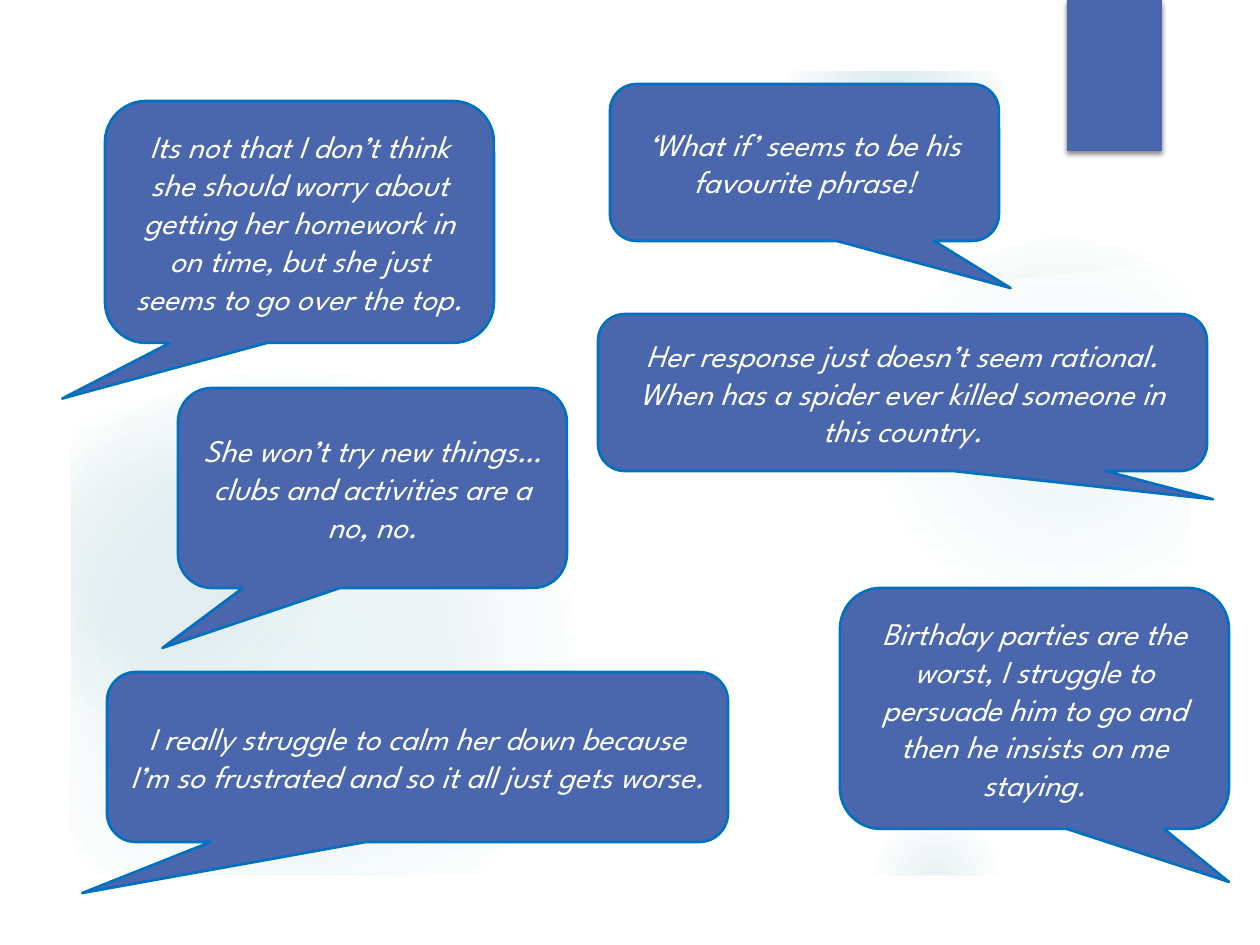
from lxml.etree import SubElement
from pptx import Presentation
from pptx.dml.color import RGBColor
from pptx.enum.shapes import MSO_SHAPE
from pptx.enum.text import MSO_ANCHOR, PP_ALIGN
from pptx.oxml import parse_xml
from pptx.oxml.ns import nsdecls, qn
from pptx.util import Emu, Pt

PX = 914400 / 126
WIDTH, HEIGHT = 1260, 945
COLOURS = {"white": "FFFFFF", "glow": "5AA2AE", "blue": "4A66AC",
           "outline": "0070C0", "shadow": "000000"}
QUOTE_FONT = {"name": "League Spartan", "size": Pt(18), "italic": True}

# Box, then gradient stops as (position %, opacity %); the first two rise above the sheet.
GLOWS = [
    ((868, 231, 388, 388), [(0, 7), (36, 6), (69, 0)]),
    ((784, 0, 220, 220), [(0, 14), (36, 7), (73, 0)]),
    ((0, 399, 325, 325), [(0, 8), (36, 8), (72, 0)]),
    ((868, 809, 136, 136), [(0, 14), (36, 7), (66, 0)]),
    ((0, 368, 577, 577), [(0, 11), (36, 10), (75, 0)]),
]
SWOOSH = [(881, 295), (960, 295), (1080, 281), (1205, 262), (1198, 219), (1135, 239),
          (1071, 256), (1009, 268), (941, 281), (877, 289)]
SHEET = [(67, 256), (67, 881), (1193, 881), (1193, 256), (1091, 271), (989, 282),
         (887, 289), (787, 294), (690, 295), (597, 295), (509, 294), (426, 290),
         (349, 285), (280, 280), (166, 268), (93, 260)]
FRAME = [[(0, 0), (0, HEIGHT), (WIDTH, HEIGHT), (WIDTH, 0)],
         [(1191, 876), (71, 876), (71, 71), (1191, 71)]]

# Box, tail tip as a share of the box measured from its centre, and wording.
QUOTES = [
    ((105, 101, 389, 242), (-0.61, 0.73),
     "Its not that I don’t think she should worry about getting her homework in on time, "
     "but she just seems to go over the top."),
    ((610, 84, 389, 157), (0.53, 0.8), "‘What if’ seems to be his favourite phrase!"),
    ((178, 388, 389, 200), (-0.54, 0.8),
     "She won’t try new things…clubs and activities are a no, no."),
    ((598, 314, 609, 157), (0.51, 0.68),
     "Her response just doesn’t seem rational. When has a spider ever killed someone "
     "in this country."),
    ((107, 672, 621, 170), (-0.54, 0.8),
     "I really struggle to calm her down because I’m so frustrated and so it all just "
     "gets worse."),
    ((840, 588, 389, 241), (0.5, 0.72),
     "Birthday parties are the worst, I struggle to persuade him to go and then he "
     "insists on me staying."),
]


def emu(pixels):
    return Emu(round(pixels * PX))


def rgb(name):
    return RGBColor.from_string(COLOURS[name])


def paint(shape, colour):
    shape.shadow.inherit = False
    shape.fill.solid()
    shape.fill.fore_color.rgb = rgb(colour)
    shape.line.fill.background()


def add_glow(slide, box, stops):
    shape = slide.shapes.add_shape(MSO_SHAPE.OVAL, *map(emu, box))
    stop_xml = "".join(
        f'<a:gs pos="{position * 1000}"><a:srgbClr val="{COLOURS["glow"]}">'
        f'<a:alpha val="{opacity * 1000}"/></a:srgbClr></a:gs>'
        for position, opacity in stops)
    shape._element.spPr.append(parse_xml(
        f'<a:gradFill {nsdecls("a")} rotWithShape="1"><a:gsLst>{stop_xml}</a:gsLst>'
        '<a:path path="circle"><a:fillToRect l="50000" t="50000" r="50000" b="50000"/>'
        '</a:path></a:gradFill>'))
    shape.line.fill.background()
    shape.shadow.inherit = False


def add_white_outline(slide, *contours):
    builder = slide.shapes.build_freeform(*contours[0][0], scale=PX)
    builder.add_line_segments(contours[0][1:], close=True)
    for contour in contours[1:]:
        builder.move_to(*contour[0])
        builder.add_line_segments(contour[1:], close=True)
    shape = builder.convert_to_shape()
    paint(shape, "white")
    return shape


def add_backdrop(slide):
    """Glows showing above a curved sheet, then glows on it, all cropped by a frame."""
    for box, stops in GLOWS[:2]:
        add_glow(slide, box, stops)
    swoosh = add_white_outline(slide, SWOOSH)
    swoosh.rotation = 350.2
    colour = swoosh._element.spPr.find(".//" + qn("a:srgbClr"))
    SubElement(colour, qn("a:alpha"), val="20000")
    add_white_outline(slide, SHEET)
    for box, stops in GLOWS:
        add_glow(slide, box, stops)
    add_white_outline(slide, *FRAME)


def add_tab(slide, box):
    shape = slide.shapes.add_shape(MSO_SHAPE.RECTANGLE, *map(emu, box))
    paint(shape, "blue")
    effects = shape._element.spPr.find(qn("a:effectLst"))
    effects.append(parse_xml(
        f'<a:outerShdw {nsdecls("a")} blurRad="{Pt(3)}" dist="{Pt(2)}" dir="5400000" '
        f'rotWithShape="0"><a:srgbClr val="{COLOURS["shadow"]}"><a:alpha val="45000"/>'
        '</a:srgbClr></a:outerShdw>'))


def add_quote(slide, box, tail, text):
    shape = slide.shapes.add_shape(MSO_SHAPE.ROUNDED_RECTANGULAR_CALLOUT, *map(emu, box))
    for index, value in enumerate((*tail, 0.17)):
        shape.adjustments[index] = value
    paint(shape, "blue")
    shape.line.color.rgb = rgb("outline")
    shape.line.width = Pt(1.5)
    frame = shape.text_frame
    frame.word_wrap = True
    frame.vertical_anchor = MSO_ANCHOR.MIDDLE
    paragraph = frame.paragraphs[0]
    paragraph.alignment = PP_ALIGN.CENTER
    run = paragraph.add_run()
    run.text = text
    for attribute, value in QUOTE_FONT.items():
        setattr(run.font, attribute, value)
    run.font.color.rgb = rgb("white")


def main():
    presentation = Presentation()
    presentation.slide_width, presentation.slide_height = emu(WIDTH), emu(HEIGHT)
    slide = presentation.slides.add_slide(presentation.slide_layouts[6])
    add_backdrop(slide)
    add_tab(slide, (1067, 0, 95, 151))
    for box, tail, text in QUOTES:
        add_quote(slide, box, tail, text)
    presentation.save("out.pptx")


if __name__ == "__main__":
    main()
